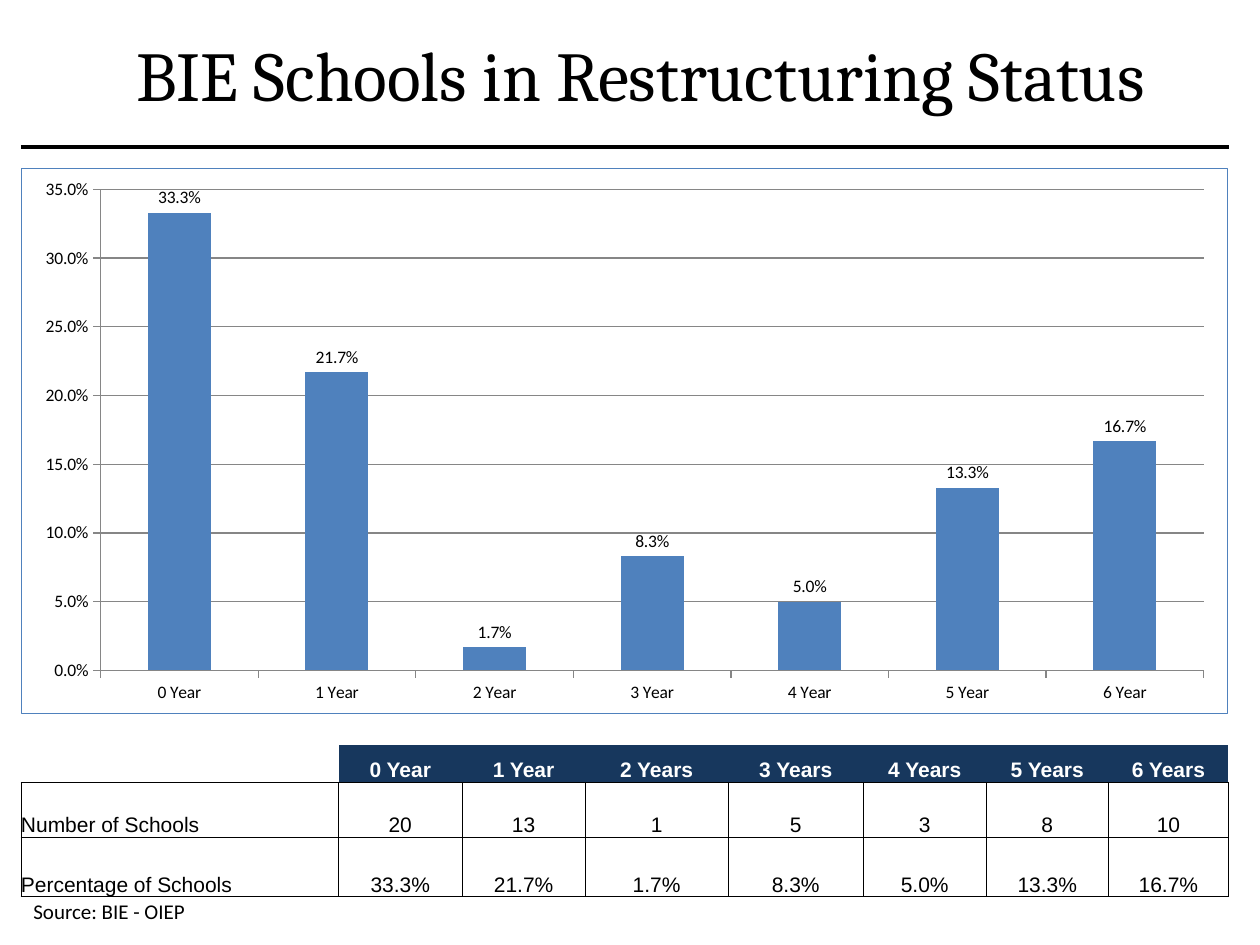
"""Builds the slide on BIE schools in restructuring status."""
from lxml import etree
from pptx import Presentation, util as u
from pptx.chart import data
from pptx.dml.color import RGBColor
from pptx.enum import chart as ch, shapes, text
from pptx.oxml import ns

Pt = u.Pt
BLACK = RGBColor(0x00, 0x00, 0x00)
WHITE = RGBColor(0xFF, 0xFF, 0xFF)
NAVY = RGBColor(0x17, 0x37, 0x5D)
BLUE = RGBColor(0x4F, 0x81, 0xBD)
GRAY = RGBColor(0x86, 0x86, 0x86)
LEFT, WIDTH = 12, 690


class Deck:
    """Holds the style and the current slide."""

    def __init__(self):
        self.prs = Presentation()
        self.prs.slide_width, self.prs.slide_height = Pt(720), Pt(540)
        self.s = self.prs.slides.add_slide(self.prs.slide_layouts[6])

    def font(self, f, name, size, color=BLACK, bold=False):
        """Set a font."""
        f.name, f.size, f.bold = name, Pt(size), bold
        f.color.rgb = color

    def text(self, box, words, name, size, align, anchor, wrap=True):
        """Add a text box."""
        tf = self.s.shapes.add_textbox(*map(Pt, box)).text_frame
        tf.word_wrap, tf.vertical_anchor = wrap, anchor
        p = tf.paragraphs[0]
        p.text, p.alignment = words, align
        self.font(p.font, name, size)

    def rule(self, x1, y1, x2, y2, weight):
        """Add a straight line."""
        sp = self.s.shapes.add_connector(
            shapes.MSO_CONNECTOR.STRAIGHT, *map(Pt, (x1, y1, x2, y2)))
        sp.line.color.rgb, sp.line.width = BLACK, Pt(weight)
        etree.SubElement(sp._element.spPr, ns.qn("a:effectLst"))

    def columns(self, box, cats, vals):
        """Add a framed column chart of percentages."""
        cd = data.CategoryChartData(number_format="0.0%")
        cd.categories = cats
        cd.add_series("Series 1", vals)
        c = self.s.shapes.add_chart(
            ch.XL_CHART_TYPE.COLUMN_CLUSTERED, *map(Pt, box), cd).chart
        c.has_legend = c.has_title = False
        self.font(c.font, "Calibri", 10)
        plot = c.plots[0]
        plot.gap_width, plot.vary_by_categories = 150, False
        fill = plot.series[0].format.fill
        fill.solid()
        fill.fore_color.rgb = BLUE
        plot.has_data_labels = True
        labels = plot.data_labels
        labels.show_value = True
        labels.number_format, labels.number_format_is_linked = "0.0%", False
        labels.position = ch.XL_LABEL_POSITION.OUTSIDE_END
        for axis in (c.category_axis, c.value_axis):
            axis.major_tick_mark = ch.XL_TICK_MARK.OUTSIDE
            axis.format.line.color.rgb = GRAY
        v = c.value_axis
        v.minimum_scale, v.maximum_scale, v.major_unit = 0, 0.35, 0.05
        v.tick_labels.number_format = "0.0%"
        v.tick_labels.number_format_is_linked = False
        v.major_gridlines.format.line.color.rgb = GRAY
        frame = etree.fromstring(
            f'<c:spPr {ns.nsdecls("c", "a")}><a:solidFill><a:srgbClr val="{WHITE}"/>'
            f'</a:solidFill><a:ln w="{Pt(0.75)}"><a:solidFill><a:srgbClr val="{BLUE}"/>'
            '</a:solidFill></a:ln></c:spPr>')
        c._chartSpace.find(ns.qn("c:chart")).addnext(frame)

    def borders(self, cell, sides):
        """Draw the named sides of a cell and clear the others."""
        tc_pr = cell._tc.get_or_add_tcPr()
        for side in "LRTB":
            ln = etree.SubElement(tc_pr, ns.qn(f"a:ln{side}"), w=str(Pt(0.5)))
            if side in sides:
                fill = etree.SubElement(ln, ns.qn("a:solidFill"))
                etree.SubElement(fill, ns.qn("a:srgbClr"), val=str(BLACK))
            else:
                etree.SubElement(ln, ns.qn("a:noFill"))

    def table(self, box, widths, heights, rows):
        """Add a table with a dark header row."""
        t = self.s.shapes.add_table(len(rows), len(widths), *map(Pt, box)).table
        t.first_row = t.horz_banding = False
        for col, w in zip(t.columns, widths):
            col.width = Pt(w)
        for row, h in zip(t.rows, heights):
            row.height = Pt(h)
        for i, row in enumerate(rows):
            for j, words in enumerate(row):
                self.cell(t.cell(i, j), words, i == 0, j == 0)

    def cell(self, cell, words, header, label):
        """Fill and format one table cell."""
        self.borders(cell, "B" if header else "LRTB")
        cell.margin_left = cell.margin_right = 0
        cell.margin_top = cell.margin_bottom = 0
        cell.vertical_anchor = text.MSO_ANCHOR.BOTTOM
        if header and not label:
            cell.fill.solid()
            cell.fill.fore_color.rgb = NAVY
        else:
            cell.fill.background()
        p = cell.text_frame.paragraphs[0]
        p.text = words
        p.alignment = text.PP_ALIGN.LEFT if label else text.PP_ALIGN.CENTER
        self.font(p.font, "Arial", 12, WHITE if header else BLACK, header)


def main():
    """Build and save the slide."""
    counts = [20, 13, 1, 5, 3, 8, 10]
    shares = [0.333, 0.217, 0.017, 0.083, 0.05, 0.133, 0.167]
    d = Deck()
    d.table((LEFT, 426, WIDTH, 86.5),
            [181.5, 70.5, 70.5, 81.5, 77.5, 70, 70, 68.5], [21, 31.5, 34],
            [["", "0 Year", "1 Year"] + [f"{n} Years" for n in range(2, 7)],
             ["Number of Schools"] + [str(n) for n in counts],
             ["Percentage of Schools"] + [f"{v:.1%}" for v in shares]])
    d.columns((LEFT, 96, WIDTH, 312), [f"{n} Year" for n in range(7)], shares)
    d.text((42, 0, 648, 84), "BIE Schools in Restructuring Status", "Cambria", 40,
           text.PP_ALIGN.CENTER, text.MSO_ANCHOR.MIDDLE)
    d.text((LEFT, 510, 102, 21.8), "Source: BIE - OIEP", "Calibri", 12,
           text.PP_ALIGN.LEFT, text.MSO_ANCHOR.TOP, wrap=False)
    d.rule(LEFT, 84, LEFT + WIDTH, 84, 2.25)
    d.prs.save("out.pptx")


if __name__ == "__main__":
    main()
